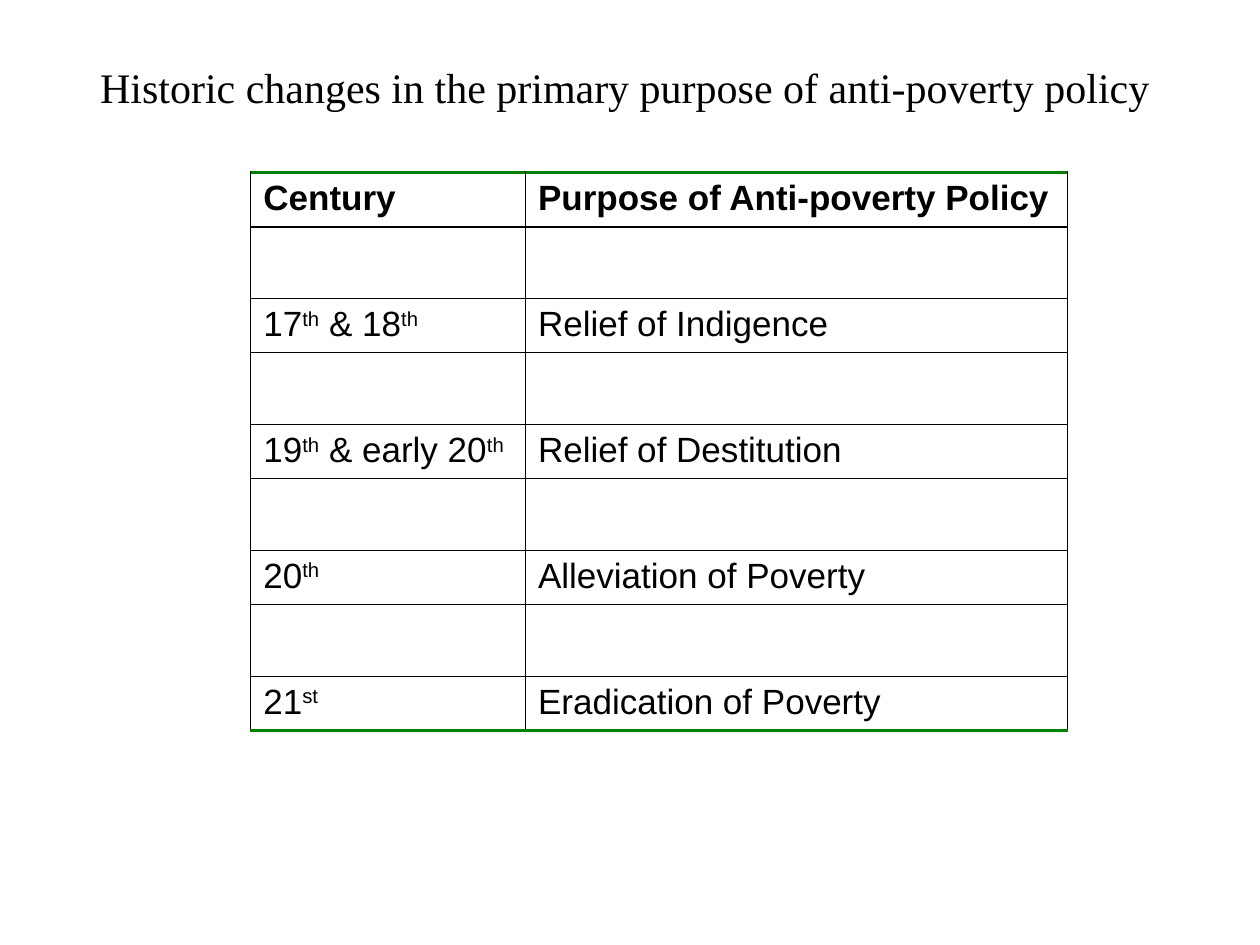
from lxml.etree import SubElement
from pptx import Presentation
from pptx.dml.color import RGBColor
from pptx.enum.text import MSO_ANCHOR, PP_ALIGN
from pptx.oxml.ns import qn
from pptx.util import Inches, Pt

HEADINGS = ("Century", "Purpose of Anti-poverty Policy")
# Every second part between bars is raised as a superscript.
PERIODS = [
    ("17|th| & 18|th", "Relief of Indigence"),
    ("19|th| & early 20|th", "Relief of Destitution"),
    ("20|th", "Alleviation of Poverty"),
    ("21|st", "Eradication of Poverty"),
]
COLUMN_WIDTHS = (2.18, 4.3)
TEXT_ROW, GAP_ROW = 0.43, 0.57


def color(value):
    return RGBColor.from_string(value)


class PolicySlide:
    ink, accent = "000000", "008000"
    title_format = {"name": "Times New Roman", "size": Pt(24), "bold": False}
    table_format = {"name": "Arial", "size": Pt(20)}

    def __init__(self, deck):
        self.slide = deck.slides.add_slide(deck.slide_layouts[5])

    def style_font(self, font, **values):
        for key, value in values.items():
            setattr(font, key, value)
        font.color.rgb = color(self.ink)

    def title(self, wording, left, top, width, height):
        heading = self.slide.shapes.title
        place = {"left": left, "top": top, "width": width, "height": height}
        for key, value in place.items():
            setattr(heading, key, Inches(value))
        frame = heading.text_frame
        frame.text = wording
        frame.word_wrap = True
        frame.vertical_anchor = MSO_ANCHOR.MIDDLE
        frame.paragraphs[0].alignment = PP_ALIGN.CENTER
        self.style_font(frame.paragraphs[0].runs[0].font, **self.title_format)

    def table(self, rows, left, top):
        heights = [TEXT_ROW if any(row) else GAP_ROW for row in rows]
        table = self.slide.shapes.add_table(
            len(rows), len(COLUMN_WIDTHS), Inches(left), Inches(top),
            Inches(sum(COLUMN_WIDTHS)), Inches(sum(heights))).table
        table.first_row = table.horz_banding = False
        for column, width in zip(table.columns, COLUMN_WIDTHS):
            column.width = Inches(width)
        thin, rule, edge = (self.ink, 0.75), (self.ink, 1), (self.accent, 2)
        lines = [edge, rule] + [thin] * (len(rows) - 2) + [edge]
        for index, (row, height) in enumerate(zip(rows, heights)):
            table.rows[index].height = Inches(height)
            borders = {"L": thin, "R": thin, "T": lines[index], "B": lines[index + 1]}
            for cell, wording in zip(table.rows[index].cells, row):
                self.borders(cell, borders)
                cell.fill.background()
                self.cell_text(cell, wording, bold=index == 0)

    def borders(self, cell, sides):
        properties = cell._tc.get_or_add_tcPr()
        for side, (hue, points) in sides.items():
            line = SubElement(properties, qn(f"a:ln{side}"), w=str(Pt(points)))
            fill = SubElement(line, qn("a:solidFill"))
            SubElement(fill, qn("a:srgbClr"), val=hue)

    def cell_text(self, cell, wording, bold):
        if not wording:
            return
        paragraph = cell.text_frame.paragraphs[0]
        for position, part in enumerate(wording.split("|")):
            run = paragraph.add_run()
            run.text = part
            self.style_font(run.font, bold=bold, **self.table_format)
            if position % 2:
                run._r.get_or_add_rPr().set("baseline", "30000")


def main():
    deck = Presentation()
    deck.slide_width, deck.slide_height = Inches(10), Inches(7.5)
    page = PolicySlide(deck)
    page.title("Historic changes in the primary purpose of anti-poverty policy",
               0.43, 0.44, 9.06, 0.5)
    rows = [HEADINGS]
    for period in PERIODS:
        rows += [("", ""), period]
    page.table(rows, 1.99, 1.37)
    deck.save("out.pptx")


if __name__ == "__main__":
    main()
